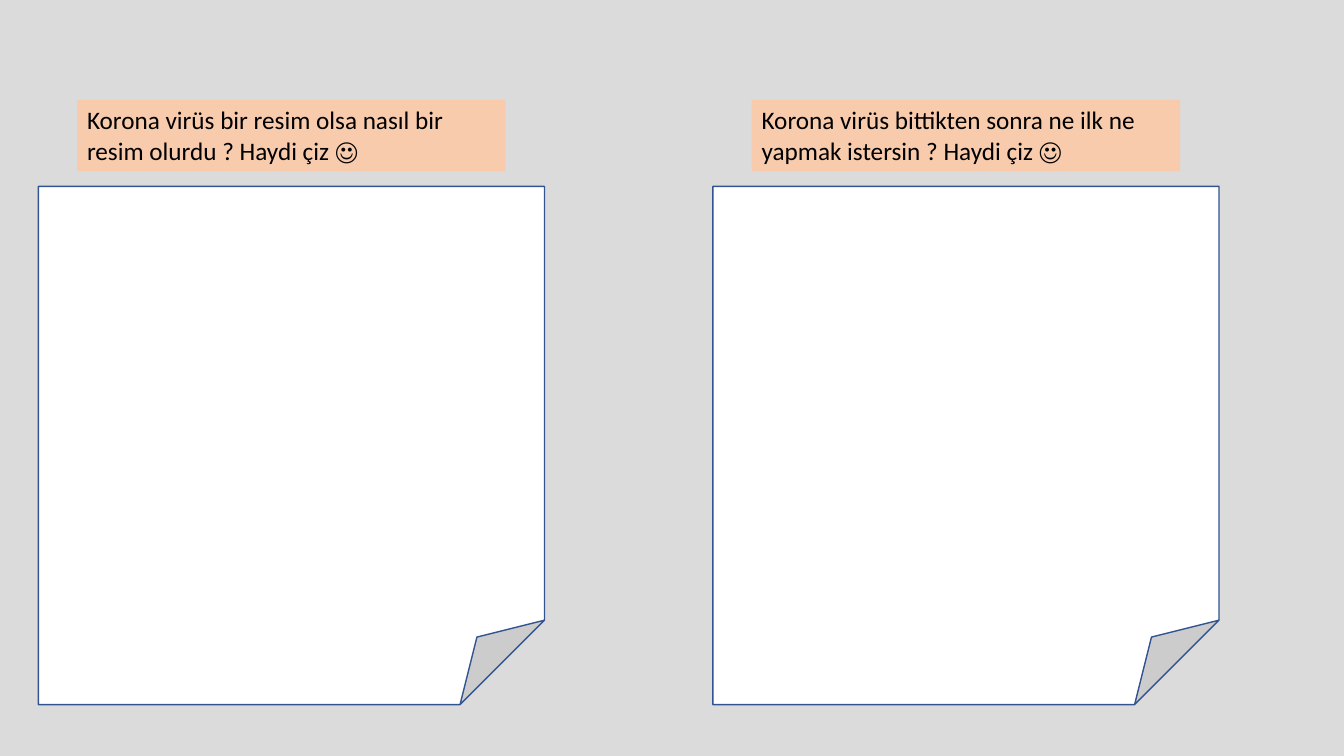
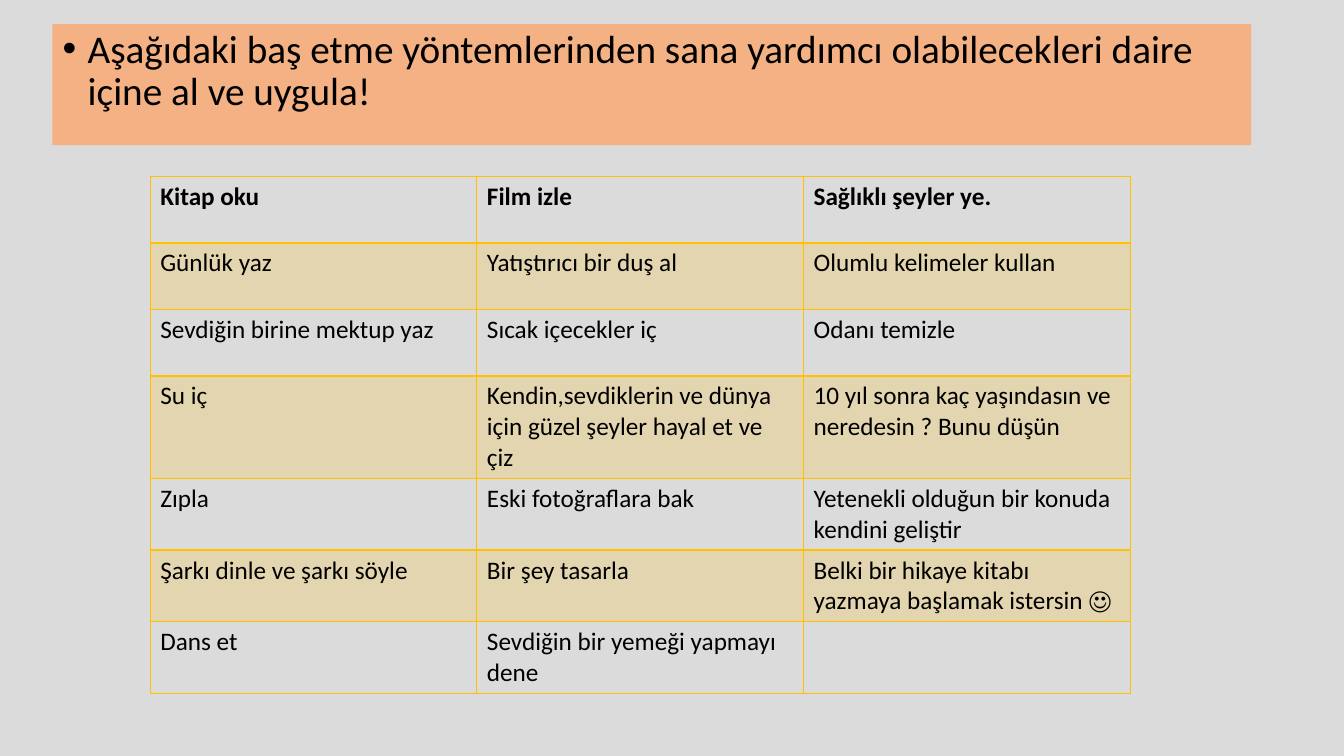
from dataclasses import dataclass

from lxml.etree import SubElement
from pptx import Presentation
from pptx.dml.color import RGBColor
from pptx.enum.shapes import MSO_SHAPE
from pptx.enum.text import MSO_ANCHOR, MSO_AUTO_SIZE
from pptx.oxml.ns import qn
from pptx.util import Inches, Pt


@dataclass(frozen=True)
class Theme:
    background: str = "DBDBDB"
    paper: str = "FFFFFF"
    paper_line: str = "325491"
    prompt: str = "F8CBAD"
    banner: str = "F4B183"
    accent: str = "FFC000"
    band_opacity: int = 20
    text: str = "000000"
    font: str = "Calibri"
    body_size: int = 18
    banner_size: int = 28


THEME = Theme()
TITLE_AND_CONTENT, BLANK = 1, 6

DRAWING_PROMPTS = [
    "Korona virüs bir resim olsa nasıl bir resim olurdu ? Haydi çiz ☺",
    "Korona virüs bittikten sonra ne ilk ne yapmak istersin ? Haydi çiz ☺",
]
COPING_HEADING = (
    "Aşağıdaki baş etme yöntemlerinden sana yardımcı olabilecekleri "
    "daire içine al ve uygula!"
)
COPING_METHODS = [
    ["Kitap oku", "Film izle", "Sağlıklı şeyler ye."],
    ["Günlük yaz", "Yatıştırıcı bir duş al", "Olumlu kelimeler kullan"],
    ["Sevdiğin birine mektup yaz", "Sıcak içecekler iç", "Odanı temizle"],
    ["Su iç", "Kendin,sevdiklerin ve dünya için güzel şeyler hayal et ve çiz",
     "10 yıl sonra kaç yaşındasın ve neredesin ? Bunu düşün"],
    ["Zıpla", "Eski fotoğraflara bak",
     "Yetenekli olduğun bir konuda kendini geliştir"],
    ["Şarkı dinle ve şarkı söyle", "Bir şey tasarla",
     "Belki bir hikaye kitabı yazmaya başlamak istersin ☺"],
    ["Dans et", "Sevdiğin bir yemeği yapmayı dene", ""],
]


def paint(fill, color):
    fill.solid()
    fill.fore_color.rgb = RGBColor.from_string(color)


def set_text(text_frame, text, size=THEME.body_size, bold=False):
    text_frame.text = text
    for run in text_frame.paragraphs[0].runs:
        run.font.name = THEME.font
        run.font.size = Pt(size)
        run.font.bold = bold
        run.font.color.rgb = RGBColor.from_string(THEME.text)


def add_drawing_panel(slide, left, top, width, prompt):
    """A prompt centred above a folded sheet to draw on."""
    # Sheet of paper
    sheet = slide.shapes.add_shape(
        MSO_SHAPE.FOLDED_CORNER, Inches(left), Inches(top + 0.86),
        Inches(width), Inches(5.14))
    sheet.shadow.inherit = False
    paint(sheet.fill, THEME.paper)
    sheet.line.color.rgb = RGBColor.from_string(THEME.paper_line)
    sheet.line.width = Pt(1)

    # Prompt
    prompt_width = 4.25
    label = slide.shapes.add_textbox(
        Inches(left + (width - prompt_width) / 2), Inches(top),
        Inches(prompt_width), Inches(0.71))
    paint(label.fill, THEME.prompt)
    label.text_frame.word_wrap = True
    label.text_frame.auto_size = MSO_AUTO_SIZE.SHAPE_TO_FIT_TEXT
    set_text(label.text_frame, prompt)


def fill_banner(banner, left, top, width, height, text):
    """The body placeholder as a coloured band with one bullet."""
    banner.left, banner.top = Inches(left), Inches(top)
    banner.width, banner.height = Inches(width), Inches(height)
    paint(banner.fill, THEME.banner)
    text_frame = banner.text_frame
    text_frame.auto_size = MSO_AUTO_SIZE.NONE
    text_frame.vertical_anchor = MSO_ANCHOR.TOP
    set_text(text_frame, text, THEME.banner_size)

    paragraph = text_frame.paragraphs[0]
    paragraph.line_spacing = 0.9
    paragraph.space_before = Pt(10)
    properties = paragraph._p.get_or_add_pPr()
    properties.set("marL", str(Inches(0.25)))
    properties.set("indent", str(-Inches(0.25)))
    SubElement(properties, qn("a:buFont"), typeface="Arial")
    SubElement(properties, qn("a:buChar"), char="•")


def add_borders(cell, widths):
    """Draw the cell's sides; widths maps L, R, T and B to points."""
    properties = cell._tc.get_or_add_tcPr()
    for side, width in widths.items():
        line = SubElement(properties, qn(f"a:ln{side}"), w=str(Pt(width)))
        color = SubElement(line, qn("a:solidFill"))
        SubElement(color, qn("a:srgbClr"), val=THEME.accent)


def fill_cell(cell, banded):
    if not banded:
        cell.fill.background()
        return
    paint(cell.fill, THEME.accent)
    color = cell._tc.tcPr.find(qn("a:solidFill")).find(qn("a:srgbClr"))
    SubElement(color, qn("a:alpha"), val=str(THEME.band_opacity * 1000))


def add_method_table(slide, left, top, width, row_height, rows):
    """A grid with a bold first row and every second row tinted."""
    table = slide.shapes.add_table(
        len(rows), len(rows[0]), Inches(left), Inches(top),
        Inches(width), Inches(row_height * len(rows))).table
    table.first_row = table.horz_banding = False
    for row_index, row in enumerate(rows):
        table.rows[row_index].height = Inches(row_height)
        widths = {"L": 1, "R": 1,
                  "T": 2 if row_index == 1 else 1,
                  "B": 2 if row_index == 0 else 1}
        for column_index, text in enumerate(row):
            cell = table.cell(row_index, column_index)
            set_text(cell.text_frame, text, bold=row_index == 0)
            add_borders(cell, widths)
            fill_cell(cell, banded=row_index % 2 == 1)


def build_drawing_slide(presentation):
    slide = presentation.slides.add_slide(presentation.slide_layouts[BLANK])
    for index, prompt in enumerate(DRAWING_PROMPTS):
        add_drawing_panel(slide, 0.38 + index * 6.69, 0.99, 5.02, prompt)


def build_coping_slide(presentation):
    slide = presentation.slides.add_slide(
        presentation.slide_layouts[TITLE_AND_CONTENT])
    title = slide.shapes.title._element
    title.getparent().remove(title)
    fill_banner(slide.placeholders[1], 0.52, 0.24, 11.89, 1.2, COPING_HEADING)
    add_method_table(slide, 1.49, 1.75, 9.72, 0.66, COPING_METHODS)


def main():
    presentation = Presentation()
    presentation.slide_width = Inches(13.33)
    presentation.slide_height = Inches(7.5)
    paint(presentation.slide_master.background.fill, THEME.background)
    build_drawing_slide(presentation)
    build_coping_slide(presentation)
    presentation.save("out.pptx")


if __name__ == "__main__":
    main()
